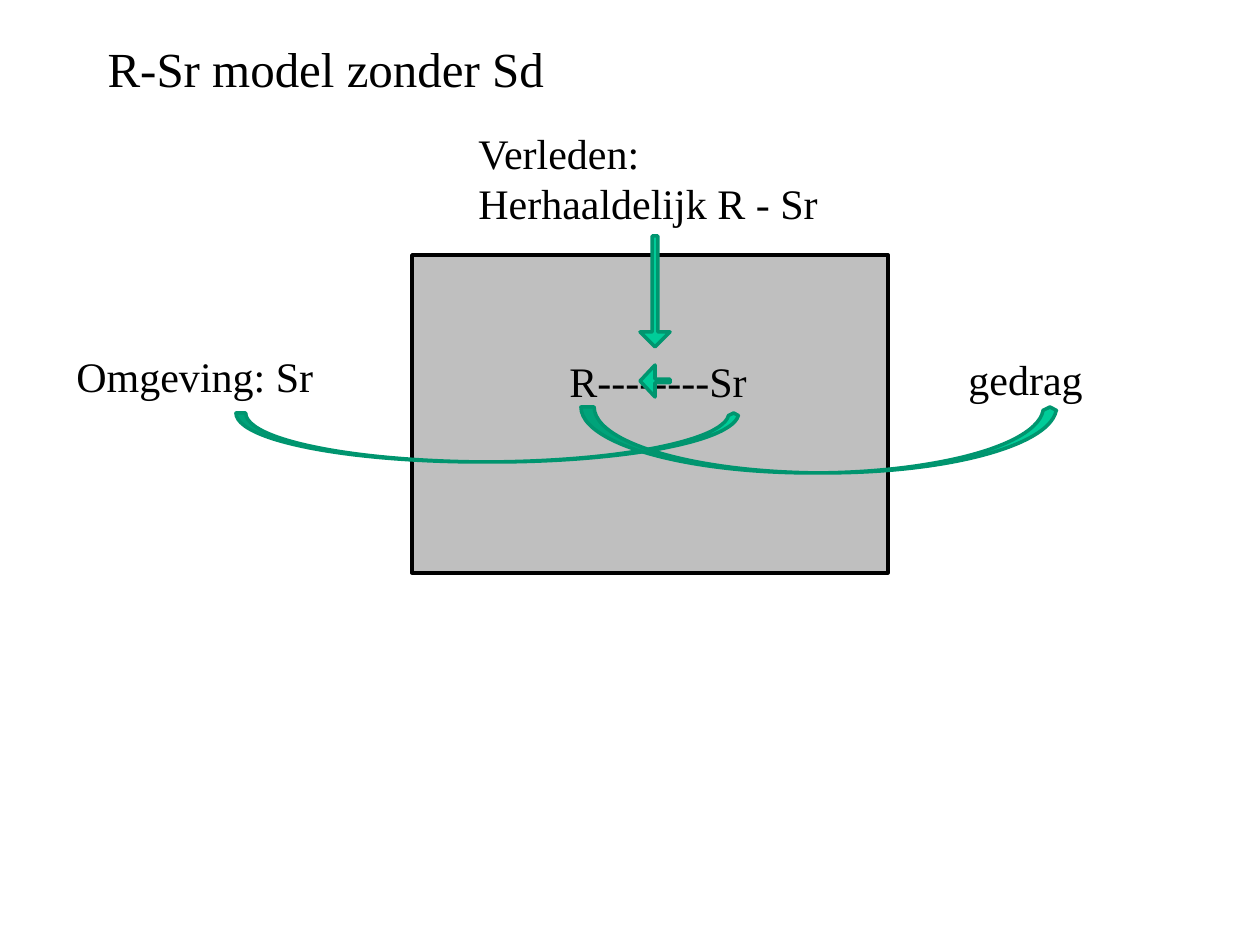
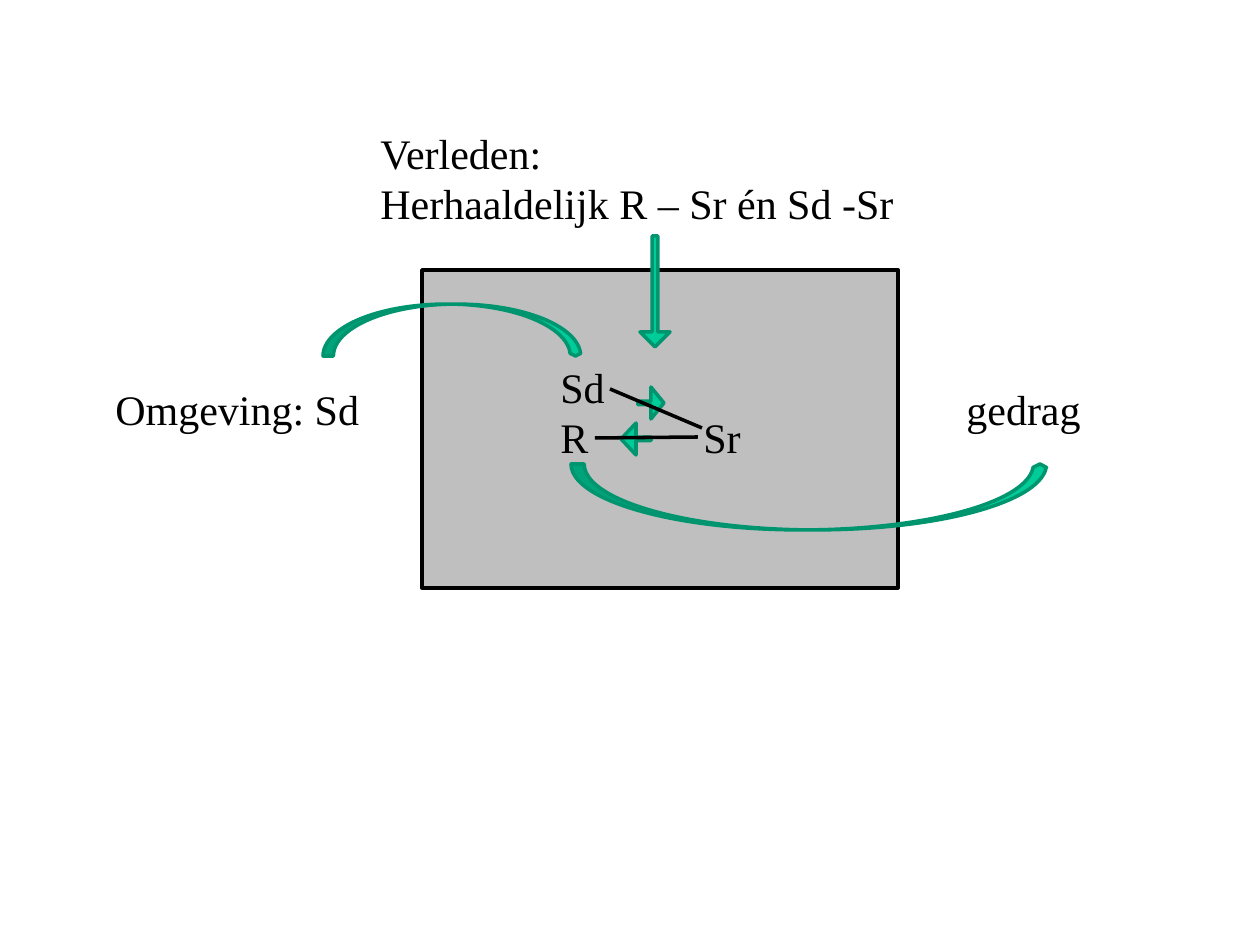
"""Builds two slides that compare the R-Sr model without and with Sd."""
from lxml.etree import SubElement
from pptx import Presentation
from pptx.dml.color import RGBColor
from pptx.enum.shapes import MSO_CONNECTOR, MSO_SHAPE
from pptx.enum.text import MSO_ANCHOR, MSO_AUTO_SIZE, PP_ALIGN
from pptx.oxml.ns import qn
from pptx.util import Emu, Pt

PX_PER_INCH = 126
BLACK = RGBColor(0x00, 0x00, 0x00)
GREY = RGBColor(0xBF, 0xBF, 0xBF)
GREEN = RGBColor(0x00, 0xCC, 0x99)
DARK_GREEN = RGBColor(0x00, 0x95, 0x6F)
FONT = "Times New Roman"
TITLE_SIZE, LABEL_SIZE, LINE_WIDTH = Pt(28), Pt(24), Pt(2)
TITLE_ONLY, BLANK = 5, 6
TITLE_AREA = (95, 32, 1121, 66)
ORGANISM_SIZE = (476, 318)
PAST_ARROW = (640, 236, 30, 111)
SR_TAB = 143

LINK_ADJUST = (0.108, 0.5)
PAST_ADJUST = (0.187, 0.5)
CURVE_ADJUST = (0.2, 0.211, 0.054)

MODELS = [
    {
        "title": "R-Sr model zonder Sd",
        "organism": (412, 255),
        "labels": [
            (["Omgeving: Sr"], (64, 344, 268, 64)),
            (["gedrag"], (956, 347, 145, 64)),
            (["Verleden:", "Herhaaldelijk R - Sr"], (466, 121, 372, 115)),
            (["R--------Sr"], (557, 349, 208, 64)),
        ],
        "curves": [((236, 413, 503, 49), False), ((581, 407, 476, 66), False)],
        "links": [(MSO_SHAPE.LEFT_ARROW, (640, 365, 30, 32))],
        "lines": [],
    },
    {
        "title": None,
        "organism": (422, 270),
        "labels": [
            (["Omgeving: Sd"], (103, 377, 275, 64)),
            (["gedrag"], (954, 377, 145, 64)),
            (["Verleden:", "Herhaaldelijk R – Sr én Sd -Sr"], (368, 121, 547, 115)),
            (["Sd", "R\tSr"], (548, 355, 212, 165)),
        ],
        "curves": [((323, 304, 258, 52), True), ((571, 464, 476, 66), False)],
        "links": [
            (MSO_SHAPE.RIGHT_ARROW, (638, 387, 26, 32)),
            (MSO_SHAPE.LEFT_ARROW, (621, 423, 30, 32)),
        ],
        "lines": [(610, 389, 702, 428), (595, 438, 698, 437)],
    },
]


def px(*lengths):
    return [Emu(round(length * 914400 / PX_PER_INCH)) for length in lengths]


def write(paragraph, words, size):
    run = paragraph.add_run()
    run.text = words
    run.font.name, run.font.size = FONT, size
    run.font.color.rgb = BLACK


def add_title(slide, words):
    title = slide.shapes.title
    title.left, title.top, title.width, title.height = px(*TITLE_AREA)
    frame = title.text_frame
    frame.auto_size, frame.vertical_anchor = MSO_AUTO_SIZE.NONE, MSO_ANCHOR.TOP
    paragraph = frame.paragraphs[0]
    paragraph.alignment = PP_ALIGN.LEFT
    write(paragraph, words, TITLE_SIZE)


def add_label(slide, rows, area):
    frame = slide.shapes.add_textbox(*px(*area)).text_frame
    frame.word_wrap = True
    for index, row in enumerate(rows):
        paragraph = frame.add_paragraph() if index else frame.paragraphs[0]
        write(paragraph, row, LABEL_SIZE)
        if "\t" in row:
            tabs = SubElement(paragraph._p.get_or_add_pPr(), qn("a:tabLst"))
            SubElement(tabs, qn("a:tab"), pos=str(px(SR_TAB)[0]), algn="l")


def add_figure(slide, kind, area, adjust=(), fill=GREEN, outline=DARK_GREEN):
    figure = slide.shapes.add_shape(kind, *px(*area))
    figure.shadow.inherit = False
    figure.fill.solid()
    figure.fill.fore_color.rgb = fill
    figure.line.color.rgb = outline
    figure.line.width = LINE_WIDTH
    for index, value in enumerate(adjust):
        figure.adjustments[index] = value
    return figure


def add_curve(slide, area, arched):
    curve = add_figure(slide, MSO_SHAPE.CURVED_UP_ARROW, area, CURVE_ADJUST)
    if arched:
        curve.rotation = 180
        curve._element.spPr.find(qn("a:xfrm")).set("flipH", "1")


def add_line(slide, ends):
    line = slide.shapes.add_connector(MSO_CONNECTOR.STRAIGHT, *px(*ends))
    line.line.color.rgb = BLACK
    line.line.width = LINE_WIDTH
    SubElement(line._element.spPr, qn("a:effectLst"))


def add_model(deck, model):
    layout = TITLE_ONLY if model["title"] else BLANK
    slide = deck.slides.add_slide(deck.slide_layouts[layout])
    if model["title"]:
        add_title(slide, model["title"])
    organism = model["organism"] + ORGANISM_SIZE
    add_figure(slide, MSO_SHAPE.RECTANGLE, organism, fill=GREY, outline=BLACK)
    for rows, area in model["labels"]:
        add_label(slide, rows, area)
    add_figure(slide, MSO_SHAPE.DOWN_ARROW, PAST_ARROW, PAST_ADJUST)
    for area, arched in model["curves"]:
        add_curve(slide, area, arched)
    for kind, area in model["links"]:
        add_figure(slide, kind, area, LINK_ADJUST)
    for ends in model["lines"]:
        add_line(slide, ends)


def main():
    deck = Presentation()
    deck.slide_width, deck.slide_height = px(1260, 945)
    for model in MODELS:
        add_model(deck, model)
    deck.save("out.pptx")


if __name__ == "__main__":
    main()
